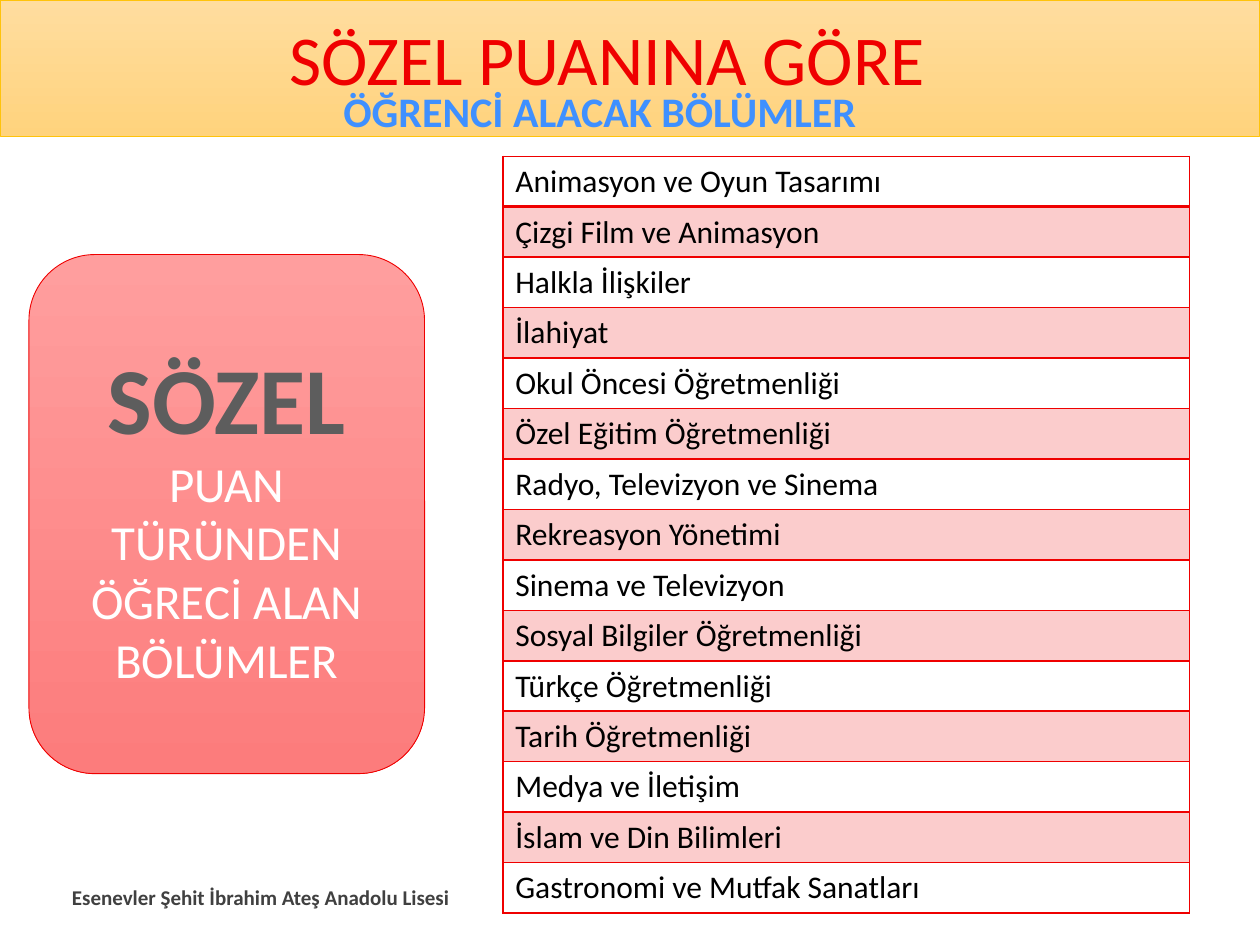
from lxml import etree
from pptx import Presentation
from pptx.dml.color import RGBColor
from pptx.enum.shapes import MSO_SHAPE as Shape
from pptx.enum.text import MSO_ANCHOR as Anchor, PP_ALIGN as Align
from pptx.oxml.ns import qn
from pptx.util import Inches, Pt

RED = RGBColor(0xEF, 0x00, 0x00)
ROSE = RGBColor(0xFF, 0x9E, 0x9E)
CORAL = RGBColor(0xFC, 0x7C, 0x7C)
CREAM = RGBColor(0xFF, 0xDD, 0x9F)
AMBER = RGBColor(0xFF, 0xD3, 0x7D)
GOLD = RGBColor(0xFF, 0xC3, 0x0B)
BLUE = RGBColor(0x3F, 0x90, 0xFF)
GRAY = RGBColor(0x5D, 0x5D, 0x5D)
DARK = RGBColor(0x40, 0x40, 0x40)
BLACK = RGBColor(0x00, 0x00, 0x00)
WHITE = RGBColor(0xFF, 0xFF, 0xFF)
FONT = "Calibri"

FIELDS = [
    "Animasyon ve Oyun Tasarımı",
    "Çizgi Film ve Animasyon",
    "Halkla İlişkiler",
    "İlahiyat",
    "Okul Öncesi Öğretmenliği",
    "Özel Eğitim Öğretmenliği",
    "Radyo, Televizyon ve Sinema",
    "Rekreasyon Yönetimi",
    "Sinema ve Televizyon",
    "Sosyal Bilgiler Öğretmenliği",
    "Türkçe Öğretmenliği",
    "Tarih Öğretmenliği",
    "Medya ve İletişim",
    "İslam ve Din Bilimleri",
    "Gastronomi ve Mutfak Sanatları",
]


def style(para, size, color, bold=False, align=Align.CENTER):
    para.alignment = align
    for run in para.runs:
        font = run.font
        font.name, font.size, font.bold = FONT, Pt(size), bold
        font.color.rgb = color


def add_panel(slide, kind, box, top, base, edge):
    panel = slide.shapes.add_shape(kind, *box)
    panel.shadow.inherit = False
    panel.fill.gradient()
    panel.fill.gradient_angle = 270
    for stop, color in zip(panel.fill.gradient_stops, (top, base)):
        stop.color.rgb = color
    panel.line.color.rgb = edge
    panel.line.width = Pt(0.5)
    return panel


def add_label(slide, box, text, size, color, bold=False, anchor=Anchor.TOP):
    frame = slide.shapes.add_textbox(*box).text_frame
    frame.word_wrap = True
    frame.vertical_anchor = anchor
    frame.text = text
    style(frame.paragraphs[0], size, color, bold)


def add_header(slide, left, top, width, height):
    add_panel(slide, Shape.RECTANGLE, (left, top, width, height),
              CREAM, AMBER, GOLD)
    add_label(slide, (left - Inches(0.18), top + Inches(0.07), width, Inches(1.18)),
              "SÖZEL PUANINA GÖRE", 40, RED)
    add_label(slide, (left + Inches(0.27), top + Inches(0.63), Inches(8.98), Inches(0.5)),
              "ÖĞRENCİ ALACAK BÖLÜMLER", 24, BLUE, True)


def add_card(slide, *box):
    card = add_panel(slide, Shape.ROUNDED_RECTANGLE, box, ROSE, CORAL, RED)
    frame = card.text_frame
    frame.word_wrap = True
    frame.vertical_anchor = Anchor.MIDDLE
    frame.text = "SÖZEL\nPUAN TÜRÜNDEN ÖĞRECİ ALAN BÖLÜMLER"
    head, body = frame.paragraphs
    style(head, 54, GRAY, True)
    style(body, 28, WHITE)


def add_border(cell, side, width):
    props = cell._tc.get_or_add_tcPr()
    line = etree.SubElement(props, qn(f"a:{side}"), w=str(Pt(width)))
    fill = etree.SubElement(line, qn("a:solidFill"))
    etree.SubElement(fill, qn("a:srgbClr"), val=str(RED))


def add_fields(slide, left, top, width, height):
    table = slide.shapes.add_table(len(FIELDS), 1, left, top, width, height).table
    table.first_row = table.horz_banding = False
    for row, name in enumerate(FIELDS):
        cell = table.cell(row, 0)
        for side in ("lnL", "lnR", "lnT", "lnB"):
            thick = (row, side) in ((0, "lnB"), (1, "lnT"))
            add_border(cell, side, 2 if thick else 1)
        if row % 2:
            cell.fill.solid()
            cell.fill.fore_color.rgb = RED
            tint = cell._tc.tcPr.find(qn("a:solidFill")).find(qn("a:srgbClr"))
            etree.SubElement(tint, qn("a:alpha"), val="20000")
        else:
            cell.fill.background()
        cell.text_frame.text = name
        style(cell.text_frame.paragraphs[0], 18, BLACK, align=Align.LEFT)


def main():
    deck = Presentation()
    deck.slide_width, deck.slide_height = Inches(10), Inches(7.5)
    slide = deck.slides.add_slide(deck.slide_layouts[6])
    add_card(slide, Inches(0.23), Inches(2.02), Inches(3.14), Inches(4.12))
    add_header(slide, Inches(0), Inches(0), Inches(10), Inches(1.08))
    add_label(slide, (Inches(0.38), Inches(6.92), Inches(3.38), Inches(0.4)),
              "Esenevler Şehit İbrahim Ateş Anadolu Lisesi", 12, DARK, True,
              Anchor.MIDDLE)
    add_fields(slide, Inches(3.99), Inches(1.24), Inches(5.45), Inches(6))
    deck.save("out.pptx")


if __name__ == "__main__":
    main()
